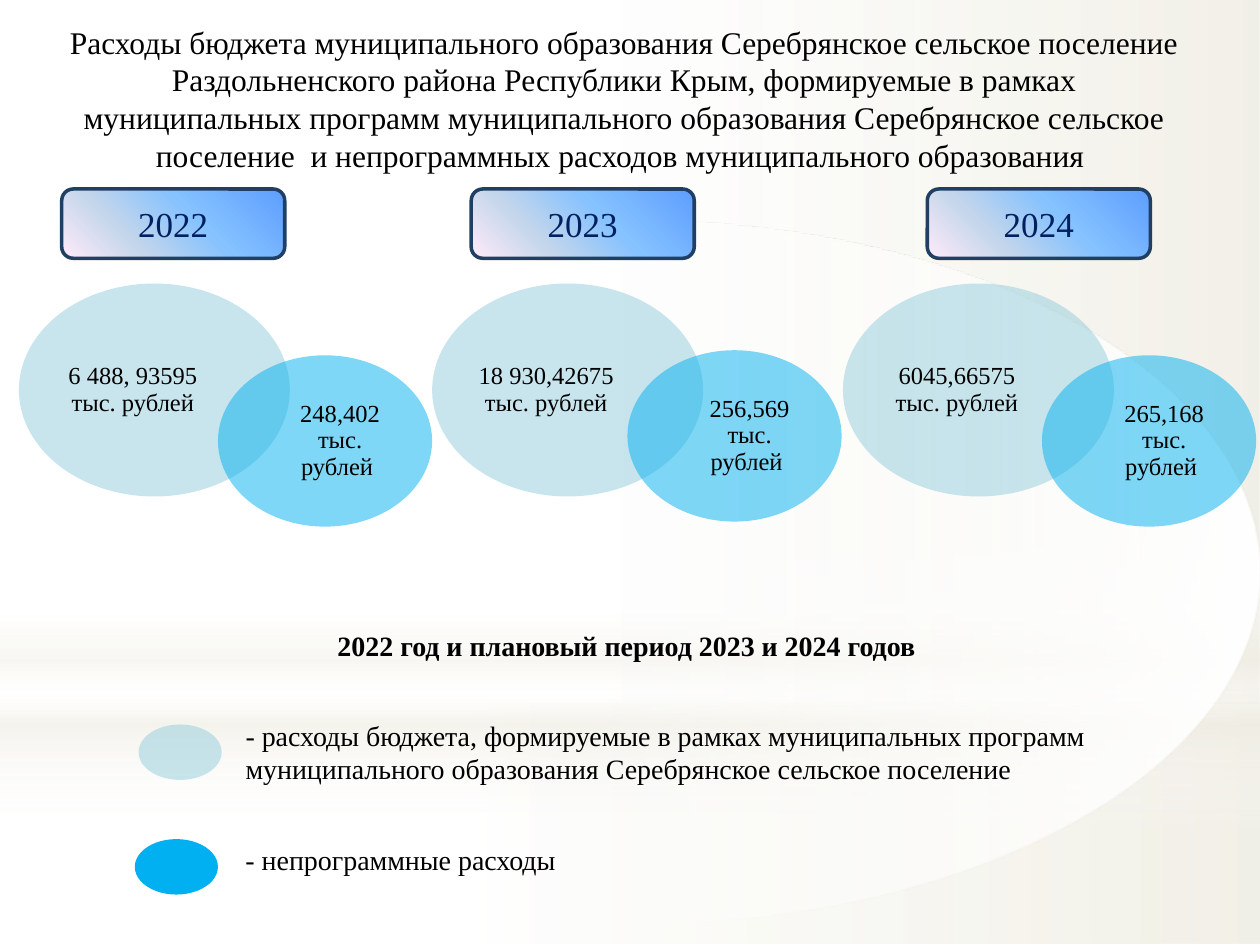
from dataclasses import dataclass

from lxml.etree import SubElement
from pptx import Presentation
from pptx.dml.color import RGBColor
from pptx.enum.shapes import MSO_SHAPE
from pptx.enum.text import MSO_ANCHOR, MSO_AUTO_SIZE, PP_ALIGN
from pptx.oxml.ns import qn
from pptx.util import Inches, Pt


@dataclass(frozen=True)
class Theme:
    """Colours, font and type sizes of the deck."""
    font: str = "Times New Roman"
    text: str = "000000"
    year: str = "002060"
    border: str = "203F63"
    program: str = "93CDDD"
    other: str = "00B0F0"
    paper: str = "FFFFFF"
    sand: str = "EEECE1"
    title_size: int = 18
    year_size: int = 20
    legend_size: int = 16
    value_size: int = 14


THEME = Theme()
TEXT_MARGINS = (0.1, 0.05, 0.1, 0.05)
YEAR_STOPS = ((0, "5E9EFF", 100), (40, "85C2FF", 100), (70, "C4D6EB", 100), (100, "FFEBFA", 100))
TITLE = (
    "Расходы бюджета муниципального образования Серебрянское сельское поселение "
    "Раздольненского района Республики Крым, формируемые в рамках муниципальных программ "
    "муниципального образования Серебрянское сельское поселение  и непрограммных расходов "
    "муниципального образования "
)
YEARS = (
    ("2022", 0.49, "6 488, 93595 тыс. рублей", 0.15, "248,402 тыс. рублей ", 1.73, 2.82),
    ("2023", 3.74, "18 930,42675 тыс. рублей", 3.43, "256,569 тыс. рублей ", 4.98, 2.78),
    ("2024", 7.36, "6045,66575 тыс. рублей", 6.69, "265,168 тыс. рублей ", 8.27, 2.82),
)
LEGEND = (
    ("- расходы бюджета, формируемые в рамках муниципальных программ муниципального "
     "образования Серебрянское сельское поселение",
     (1.85, 5.65, 7.72, 0.63), (1.1, 5.75), THEME.program, 50),
    ("- непрограммные расходы", (1.85, 6.64, 6.77, 0.36), (1.07, 6.66), THEME.other, 100),
)


def write_text(shape, text, *, size, color=THEME.text, bold=False, align=PP_ALIGN.LEFT,
               anchor=MSO_ANCHOR.TOP, margins=TEXT_MARGINS, line_spacing=None, space_after=None):
    """Put one formatted paragraph into a shape."""
    frame = shape.text_frame
    frame.auto_size = MSO_AUTO_SIZE.NONE
    frame.word_wrap = True
    frame.vertical_anchor = anchor
    (frame.margin_left, frame.margin_top,
     frame.margin_right, frame.margin_bottom) = map(Inches, margins)
    para = frame.paragraphs[0]
    para.alignment = align
    para.line_spacing = line_spacing
    if space_after is not None:
        para.space_after = Pt(space_after)
    span = para.add_run()
    span.text = text
    span.font.name = THEME.font
    span.font.size = Pt(size)
    span.font.bold = bold
    span.font.color.rgb = RGBColor.from_string(color)


def set_alpha(color_element, percent):
    """Give a colour element its opacity."""
    if percent < 100:
        SubElement(color_element, qn("a:alpha"), val=str(percent * 1000))


class SlideBuilder:
    """Draws the elements of one slide in one style."""

    def __init__(self, slide, theme):
        self.slide = slide
        self.theme = theme

    def shape(self, kind, at):
        """Add a plain preset shape without line or shadow."""
        box = self.slide.shapes.add_shape(kind, *map(Inches, at))
        box.shadow.inherit = False
        box.line.fill.background()
        return box

    def gradient(self, kind, at, stops, angle):
        """Add a shape with a linear gradient fill."""
        box = self.shape(kind, at)
        box.fill.gradient()
        grad = box.element.spPr.find(qn("a:gradFill"))
        stop_list = grad.find(qn("a:gsLst"))
        for stop in list(stop_list):
            stop_list.remove(stop)
        for position, color, opacity in stops:
            stop = SubElement(stop_list, qn("a:gs"), pos=str(position * 1000))
            set_alpha(SubElement(stop, qn("a:srgbClr"), val=color), opacity)
        direction = grad.find(qn("a:lin"))
        direction.set("ang", str(angle * 60000))
        direction.set("scaled", "0")
        return box

    def ellipse(self, at, color, opacity):
        """Add a solid ellipse with the given opacity."""
        box = self.shape(MSO_SHAPE.OVAL, at)
        box.fill.solid()
        box.fill.fore_color.rgb = RGBColor.from_string(color)
        set_alpha(box.element.spPr.find(qn("a:solidFill"))[0], opacity)
        return box

    def backdrop(self):
        """Add the soft background layers."""
        paper, sand = self.theme.paper, self.theme.sand
        rectangle = MSO_SHAPE.RECTANGLE
        self.gradient(rectangle, (0, 5.58, 10, 1.91),
                      ((0, paper, 91), (37, paper, 76), (100, sand, 79)), 0)
        self.gradient(rectangle, (0, 0, 10, 5.58),
                      ((0, paper, 89), (48, paper, 62), (100, sand, 79)), 0)
        self.gradient(rectangle, (0, 4.12, 10, 2.5),
                      ((0, paper, 0), (29, paper, 30), (45, sand, 40),
                       (55, paper, 26), (65, sand, 60), (100, paper, 0)), 90)
        self.gradient(MSO_SHAPE.OVAL, (0, 1.75, 10, 5.58),
                      ((0, paper, 100), (56, paper, 0)), 180)

    def title(self, text, at):
        """Fill the title placeholder and lift it above the backdrop."""
        title = self.slide.shapes.title
        title.left, title.top, title.width, title.height = map(Inches, at)
        write_text(title, text, size=self.theme.title_size, align=PP_ALIGN.CENTER)
        title.element.getparent().append(title.element)

    def label(self, text, at, bold=False):
        """Add a text box."""
        box = self.slide.shapes.add_textbox(*map(Inches, at))
        write_text(box, text, size=self.theme.legend_size, bold=bold)

    def year(self, text, left):
        """Add a year badge."""
        box = self.gradient(MSO_SHAPE.ROUNDED_RECTANGLE, (left, 1.5, 1.77, 0.55), YEAR_STOPS, 135)
        box.line.color.rgb = RGBColor.from_string(self.theme.border)
        box.line.width = Pt(2)
        write_text(box, text, size=self.theme.year_size, color=self.theme.year,
                   align=PP_ALIGN.CENTER, anchor=MSO_ANCHOR.MIDDLE)

    def amount(self, text, at, color, margins):
        """Add a translucent ellipse with an amount."""
        box = self.ellipse(at, color, 50)
        write_text(box, text, size=self.theme.value_size, align=PP_ALIGN.CENTER,
                   anchor=MSO_ANCHOR.MIDDLE, margins=margins, line_spacing=0.9, space_after=4.9)


def main():
    """Build and save the deck."""
    deck = Presentation()
    deck.slide_width, deck.slide_height = Inches(10), Inches(7.5)
    page = SlideBuilder(deck.slides.add_slide(deck.slide_layouts[5]), THEME)
    page.backdrop()
    page.title(TITLE, (0.43, 0.13, 9.05, 1.3))
    for year, year_left, program, program_left, other, other_left, other_top in YEARS:
        page.year(year, year_left)
        page.amount(program, (program_left, 2.25, 2.15, 1.69), THEME.program,
                    (0.03, 0.05, 0.37, 0.05))
        page.amount(other, (other_left, other_top, 1.7, 1.36), THEME.other, (0.24, 0, 0, 0))
    page.label("2022 год и плановый период 2023 и 2024 годов", (2.58, 4.94, 5.32, 0.36), bold=True)
    for text, at, (left, top), color, opacity in LEGEND:
        page.ellipse((left, top, 0.66, 0.44), color, opacity)
        page.label(text, at)
    deck.save("out.pptx")


if __name__ == "__main__":
    main()
